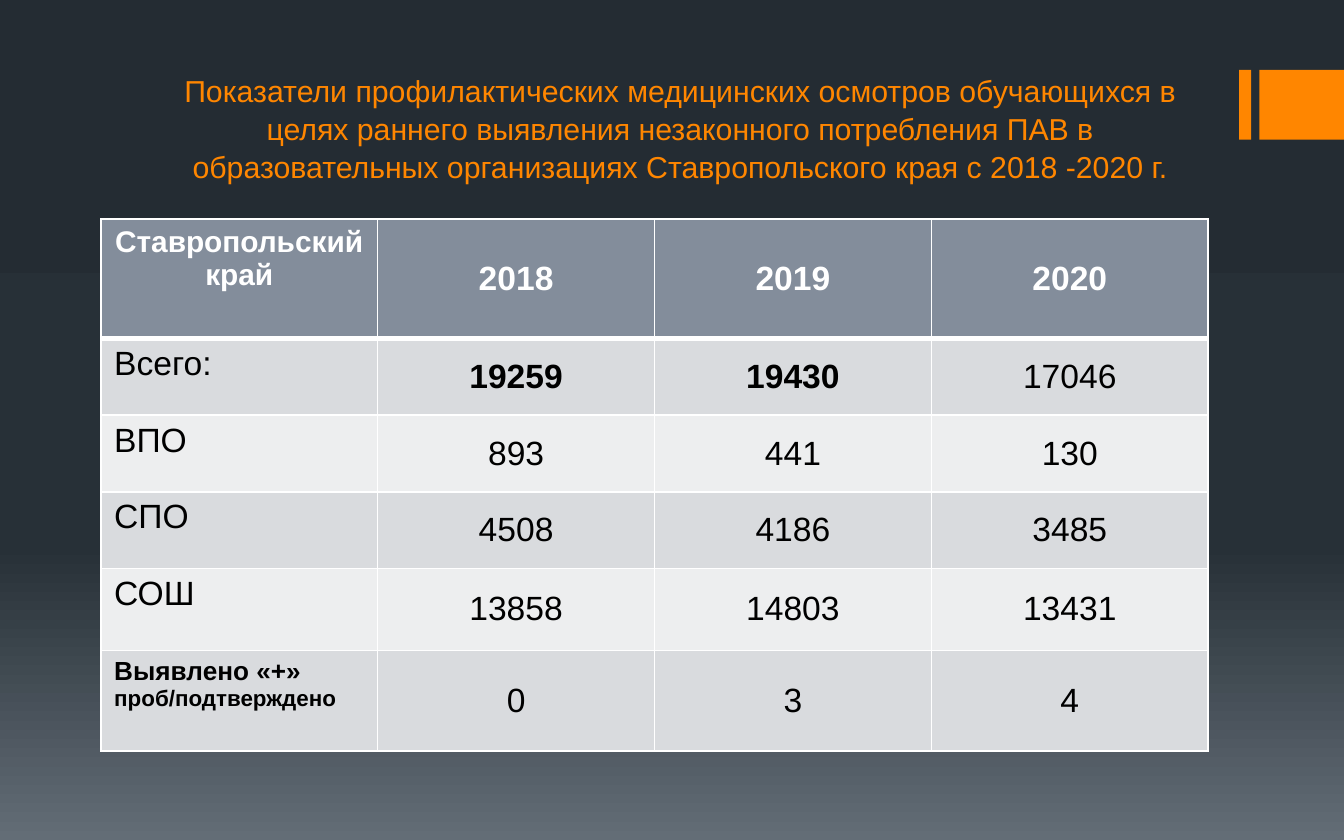
"""Builds a slide with a table of preventive medical examinations by year."""
from copy import deepcopy

from lxml.etree import SubElement
from pptx import Presentation
from pptx.dml.color import RGBColor
from pptx.enum.shapes import MSO_SHAPE
from pptx.enum.text import MSO_ANCHOR, PP_ALIGN
from pptx.oxml.ns import qn
from pptx.util import Inches, Pt

ORANGE = RGBColor(0xFF, 0x86, 0x00)
WHITE = RGBColor(0xFF, 0xFF, 0xFF)
BLACK = RGBColor(0x00, 0x00, 0x00)
HEADER = RGBColor(0x83, 0x8D, 0x9B)
DARK_BAND = RGBColor(0xD9, 0xDB, 0xDE)
LIGHT_BAND = RGBColor(0xED, 0xEE, 0xEF)
BACKDROP = [
    (0, RGBColor(0x24, 0x2C, 0x33)),
    (0.65, RGBColor(0x27, 0x30, 0x37)),
    (1, RGBColor(0x63, 0x6D, 0x76)),
]

TITLE = (
    "Показатели профилактических медицинских осмотров обучающихся в целях "
    "раннего выявления незаконного потребления ПАВ в образовательных "
    "организациях Ставропольского края с 2018 -2020 г."
)
ROWS = [
    ("Ставропольский край", "2018", "2019", "2020"),
    ("Всего:", "19259", "19430", "17046"),
    ("ВПО", "893", "441", "130"),
    ("СПО", "4508", "4186", "3485"),
    ("СОШ", "13858", "14803", "13431"),
    ("Выявлено «+» ", "0", "3", "4"),
]
ROW_HEIGHTS = [0.89, 0.57, 0.57, 0.57, 0.61, 0.75]
COLUMN_WIDTH = 2.06
BOLD_TOTALS = ("19259", "19430")


def add_span(para, text, size=18, color=BLACK, bold=False, font="Arial"):
    span = para.add_run()
    span.text = text
    span.font.name = font
    span.font.size = Pt(size)
    span.font.bold = bold
    span.font.color.rgb = color


class SlideBuilder:
    def __init__(self, page):
        self.page = page

    def backdrop(self, stops):
        fill = self.page.background.fill
        fill.gradient()
        fill.gradient_angle = 270
        stop_list = next(self.page.element.iter(qn("a:gsLst")))
        stop_list.insert(1, deepcopy(stop_list[0]))
        for stop, (position, color) in zip(fill.gradient_stops, stops):
            stop.position = position
            stop.color.rgb = color

    def bar(self, left, width):
        box = self.page.shapes.add_shape(
            MSO_SHAPE.RECTANGLE, Inches(left), Inches(0.52), Inches(width), Inches(0.52)
        )
        box.shadow.inherit = False
        box.fill.solid()
        box.fill.fore_color.rgb = ORANGE
        box.line.fill.background()

    def title(self, text):
        box = self.page.shapes.add_textbox(
            Inches(1.06), Inches(0.37), Inches(8), Inches(1.05)
        )
        frame = box.text_frame
        frame.word_wrap = True
        frame.vertical_anchor = MSO_ANCHOR.BOTTOM
        para = frame.paragraphs[0]
        para.alignment = PP_ALIGN.CENTER
        para.line_spacing = 1.05
        add_span(para, text, size=16.2, color=ORANGE)

    def borders(self, cell, row):
        properties = cell._tc.get_or_add_tcPr()
        widths = {"L": 1, "R": 1, "T": 3 if row == 1 else 1, "B": 3 if row == 0 else 1}
        for side, width in widths.items():
            line = SubElement(properties, qn(f"a:ln{side}"), w=str(Pt(width)))
            paint = SubElement(line, qn("a:solidFill"))
            SubElement(paint, qn("a:srgbClr"), val=str(WHITE))

    def cell(self, cell, text, row, column):
        is_header = row == 0
        is_label = column == 0
        is_last_label = is_label and row == len(ROWS) - 1
        self.borders(cell, row)
        cell.fill.solid()
        band = DARK_BAND if row % 2 else LIGHT_BAND
        cell.fill.fore_color.rgb = HEADER if is_header else band
        cell.vertical_anchor = MSO_ANCHOR.TOP if is_label else MSO_ANCHOR.MIDDLE
        para = cell.text_frame.paragraphs[0]
        left_aligned = is_label and not is_header
        para.alignment = PP_ALIGN.LEFT if left_aligned else PP_ALIGN.CENTER
        size = 14 if is_last_label else 16 if is_header and is_label else 18
        bold = is_header or is_last_label or text in BOLD_TOTALS
        add_span(para, text, size, WHITE if is_header else BLACK, bold)
        if is_last_label:
            add_span(para, "проб/подтверждено", size=12, bold=True)

    def table(self, rows):
        columns = len(rows[0])
        table = self.page.shapes.add_table(
            len(rows), columns, Inches(0.75), Inches(1.63),
            Inches(COLUMN_WIDTH * columns), Inches(sum(ROW_HEIGHTS)),
        ).table
        for column in table.columns:
            column.width = Inches(COLUMN_WIDTH)
        for row, values in enumerate(rows):
            table.rows[row].height = Inches(ROW_HEIGHTS[row])
            for column, text in enumerate(values):
                self.cell(table.cell(row, column), text, row, column)


def main():
    deck = Presentation()
    deck.slide_width = Inches(10)
    deck.slide_height = Inches(6.25)
    builder = SlideBuilder(deck.slides.add_slide(deck.slide_layouts[6]))
    builder.backdrop(BACKDROP)
    builder.bar(9.22, 0.09)
    builder.bar(9.37, 0.63)
    builder.title(TITLE)
    builder.table(ROWS)
    deck.save("out.pptx")


if __name__ == "__main__":
    main()
